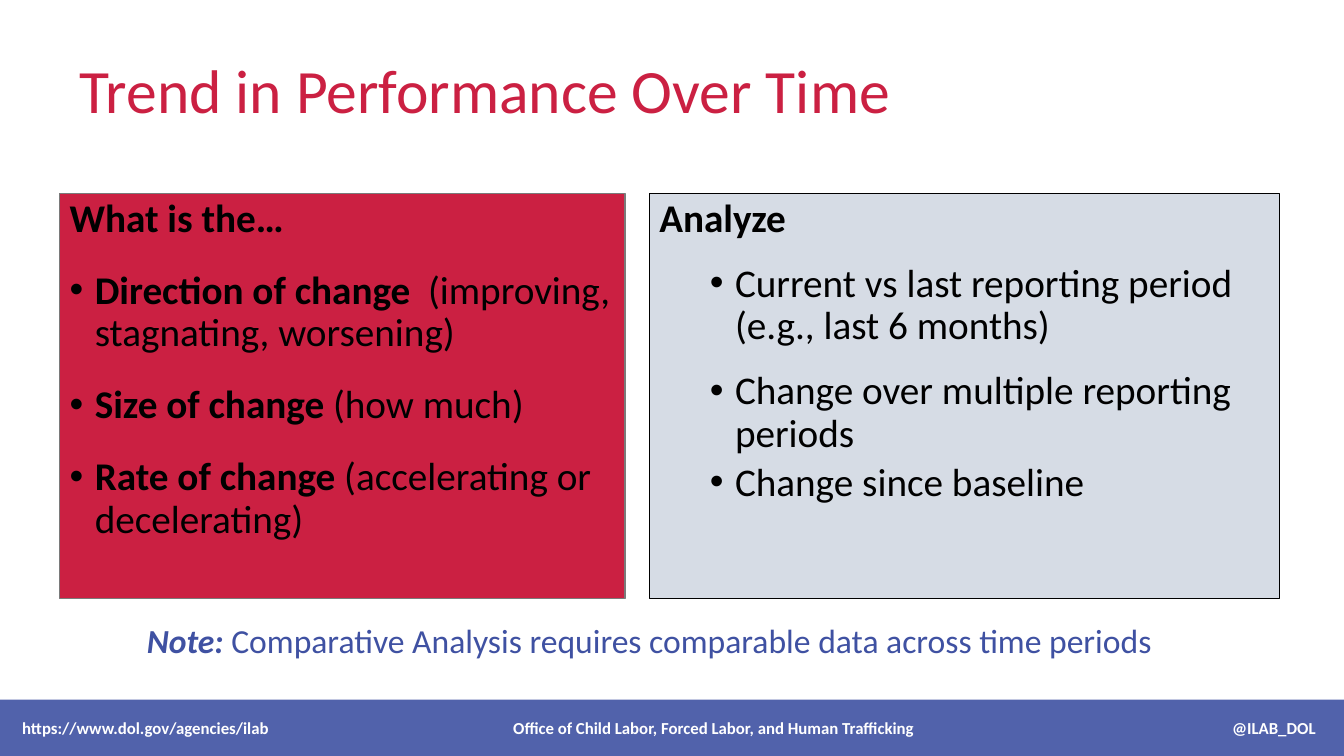
"""Build the slide on the trend in performance over time."""
from lxml.etree import SubElement
from pptx import Presentation
from pptx.dml.color import RGBColor
from pptx.enum.shapes import MSO_SHAPE
from pptx.enum.text import MSO_ANCHOR, MSO_AUTO_SIZE, PP_ALIGN
from pptx.oxml.ns import qn
from pptx.util import Inches, Pt

COLORS = {"red": "CB2042", "blue": "3F51A2", "pale": "D6DCE5",
          "gray": "7A7A7A", "black": "000000", "white": "FFFFFF"}
FONT = "Calibri"
TITLE = "Trend in Performance Over Time"
NOTE = ("Note: ", "Comparative Analysis requires comparable data across time periods")
FOOTER = ("https://www.dol.gov/agencies/ilab",
          "Office of Child Labor, Forced Labor, and Human Trafficking",
          "@ILAB_DOL")
FOOTER_TABS = (("ctr", 6.86), ("r", 12.83))
PANELS = [
    dict(box=(0.59, 1.92, 5.61, 4.02), fill="red", line=("gray", 1),
         head="What is the…", margin=0.25, before=10,
         items=[("Direction of change  ", "(improving, stagnating, worsening)", 11.2),
                ("Size of change ", "(how much)", 11.2),
                ("Rate of change ", "(accelerating or decelerating)", 11.2)]),
    dict(box=(6.44, 1.92, 6.25, 4.02), fill="pale", line=("black", 0.5),
         head="Analyze", margin=0.75, before=5,
         items=[("", "Current vs last reporting period (e.g., last 6 months)", 11.2),
                ("", "Change over multiple reporting periods", 0),
                ("", "Change since baseline", 0)]),
]


def rgb(name):
    return RGBColor.from_string(COLORS[name])


def place(sp, left, top, width, height):
    sp.left, sp.top = Inches(left), Inches(top)
    sp.width, sp.height = Inches(width), Inches(height)


def add_run(p, text, size=28, color="black", bold=False, italic=False):
    r = p.add_run()
    r.text = text
    f = r.font
    f.name, f.size, f.bold, f.italic = FONT, Pt(size), bold, italic
    f.color.rgb = rgb(color)


def format_paragraph(p, before, after, margin=0, bullet=False):
    p.alignment = PP_ALIGN.LEFT
    p.line_spacing = 0.9
    p.space_before, p.space_after = Pt(before), Pt(after)
    pPr = p._p.get_or_add_pPr()
    pPr.set("marL", str(Inches(margin)))
    pPr.set("indent", str(Inches(-0.25 if bullet else 0)))
    if bullet:
        SubElement(pPr, qn("a:buFont"), typeface="Arial")
        SubElement(pPr, qn("a:buChar"), char="•")
    else:
        SubElement(pPr, qn("a:buNone"))


def fill_panel(sp, panel):
    place(sp, *panel["box"])
    sp.fill.solid()
    sp.fill.fore_color.rgb = rgb(panel["fill"])
    color, width = panel["line"]
    sp.line.color.rgb, sp.line.width = rgb(color), Pt(width)
    tf = sp.text_frame
    tf.auto_size = MSO_AUTO_SIZE.NONE
    p = tf.paragraphs[0]
    format_paragraph(p, 10, 11.2)
    add_run(p, panel["head"], bold=True)
    for term, detail, after in panel["items"]:
        p = tf.add_paragraph()
        format_paragraph(p, panel["before"], after, panel["margin"], bullet=True)
        if term:
            add_run(p, term, bold=True)
        add_run(p, detail)


def add_footer(slide):
    sp = slide.shapes.add_shape(MSO_SHAPE.RECTANGLE, 0, 0, 0, 0)
    place(sp, 0, 6.94, 13.37, 0.56)
    sp.shadow.inherit = False
    sp.fill.solid()
    sp.fill.fore_color.rgb = rgb("blue")
    SubElement(sp.fill._xPr.find(".//" + qn("a:srgbClr")), qn("a:alpha"), val="90000")
    sp.line.fill.background()
    tf = sp.text_frame
    tf.vertical_anchor = MSO_ANCHOR.MIDDLE
    tf.margin_left = Inches(0.22)
    p = tf.paragraphs[0]
    p.alignment = PP_ALIGN.LEFT
    tabs = SubElement(p._p.get_or_add_pPr(), qn("a:tabLst"))
    for algn, pos in FOOTER_TABS:
        SubElement(tabs, qn("a:tab"), pos=str(Inches(pos)), algn=algn)
    add_run(p, "\t".join(FOOTER), size=12, color="white", bold=True)


def add_note(slide):
    sp = slide.shapes.add_textbox(0, 0, 0, 0)
    place(sp, 1.31, 6.1, 10.26, 0.5)
    tf = sp.text_frame
    tf.word_wrap = True
    p = tf.paragraphs[0]
    p.alignment = PP_ALIGN.CENTER
    add_run(p, NOTE[0], size=24, color="blue", bold=True, italic=True)
    add_run(p, NOTE[1], size=24, color="blue")


def main():
    prs = Presentation()
    prs.slide_width, prs.slide_height = Inches(13.33), Inches(7.5)
    slide = prs.slides.add_slide(prs.slide_layouts[3])
    title, *bodies = slide.placeholders
    place(title, 0.69, 0.2, 11.5, 1.45)
    tf = title.text_frame
    tf.auto_size = MSO_AUTO_SIZE.NONE
    tf.vertical_anchor = MSO_ANCHOR.MIDDLE
    p = tf.paragraphs[0]
    p.alignment, p.line_spacing = PP_ALIGN.LEFT, 0.9
    add_run(p, TITLE, size=44, color="red")
    for sp, panel in zip(bodies, PANELS):
        fill_panel(sp, panel)
    add_note(slide)
    add_footer(slide)
    prs.save("out.pptx")


if __name__ == "__main__":
    main()
